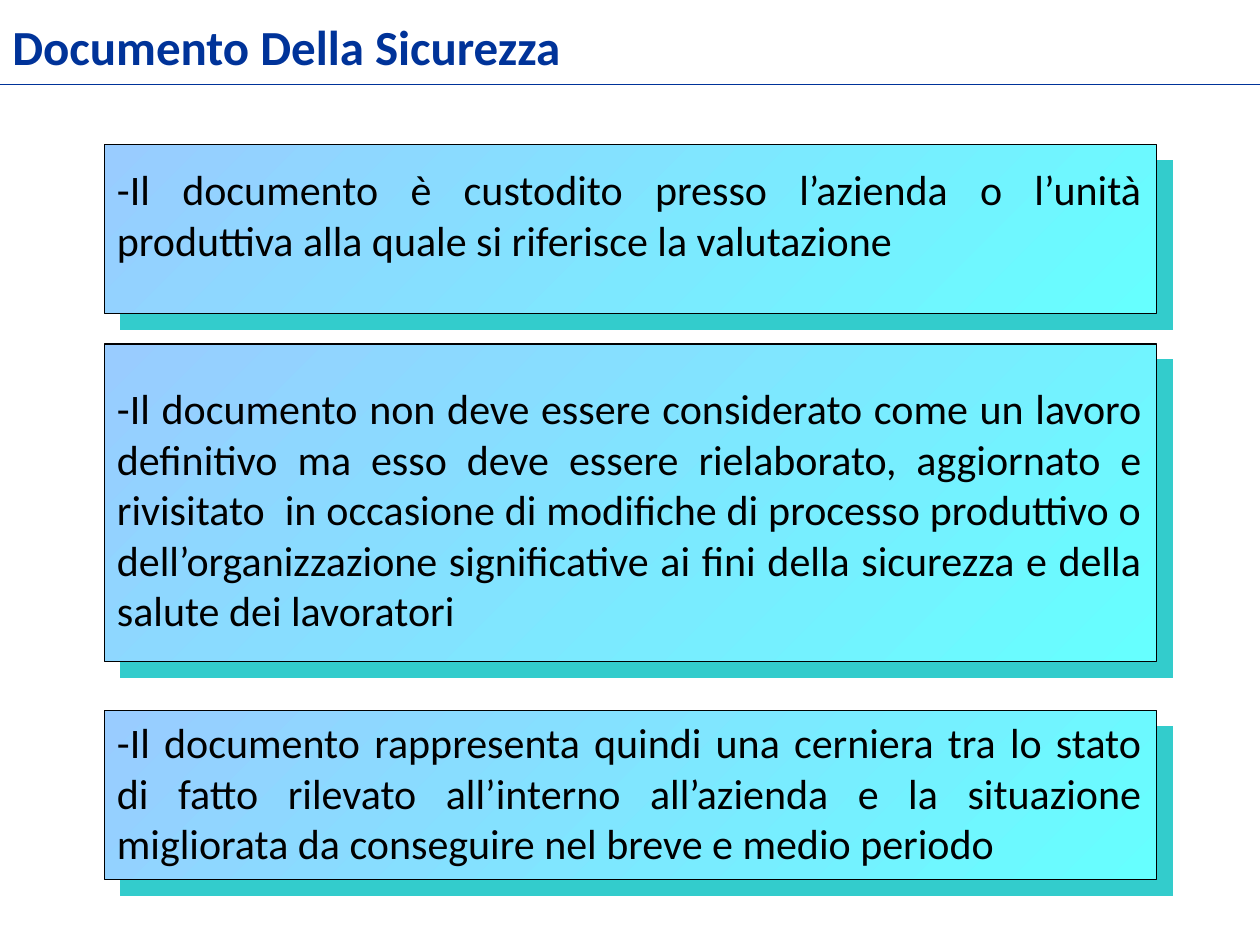
from lxml import etree
from pptx import Presentation
from pptx.dml.color import RGBColor
from pptx.enum.shapes import MSO_CONNECTOR, MSO_SHAPE
from pptx.enum.text import MSO_AUTO_SIZE, PP_ALIGN
from pptx.oxml.ns import qn
from pptx.util import Inches, Pt

RECT = MSO_SHAPE.RECTANGLE
LINE = MSO_CONNECTOR.STRAIGHT
GROW = MSO_AUTO_SIZE.SHAPE_TO_FIT_TEXT
LEFT, JUST = PP_ALIGN.LEFT, PP_ALIGN.JUSTIFY
NAVY = RGBColor(0x00, 0x33, 0x99)
BLACK = RGBColor(0x00, 0x00, 0x00)
SKY = RGBColor(0x99, 0xCC, 0xFF)
AQUA = RGBColor(0x66, 0xFF, 0xFF)
TEAL = RGBColor(0x33, 0xCC, 0xCC)

deck = Presentation()
deck.slide_width, deck.slide_height = Inches(10), Inches(7.5)
slide = deck.slides.add_slide(deck.slide_layouts[6])
shapes = slide.shapes


def write(words, place, align, style):
    box = shapes.add_textbox(*map(Inches, place))
    frame = box.text_frame
    frame.word_wrap = True
    frame.auto_size = GROW
    para = frame.paragraphs[0]
    para.alignment = align
    run = para.add_run()
    run.text = words
    color = style["color"]
    for key, value in style.items():
        if key != "color":
            setattr(run.font, key, value)
    run.font.color.rgb = color


HEAD = {"name": "Calibri", "size": Pt(28), "bold": True, "color": NAVY}
BODY = {"name": "Calibri", "size": Pt(24), "bold": False, "color": BLACK}
EDGE, WIDE = 0.83, 8.35

write("Documento Della Sicurezza", (0, 0.08, 8.3, 0.57), LEFT, HEAD)

rule = shapes.add_connector(LINE, 0, Inches(0.67), deck.slide_width, Inches(0.67))
rule.line.color.rgb = NAVY
rule.line.width = Pt(1)
etree.SubElement(rule._element.spPr, qn("a:effectLst"))

panels = [
    (1.15, 1.34, 0.1, 0.9,
     "-Il documento è custodito presso l’azienda o l’unità produttiva alla quale "
     "si riferisce la valutazione"),
    (2.73, 2.52, 0.26, 2.1,
     "-Il documento non deve essere considerato come un lavoro definitivo ma esso "
     "deve essere rielaborato, aggiornato e rivisitato  in occasione di modifiche "
     "di processo produttivo o dell’organizzazione significative ai fini della "
     "sicurezza e della salute dei lavoratori"),
    (5.64, 1.34, 0, 1.3,
     "-Il documento rappresenta quindi una cerniera tra lo stato di fatto rilevato "
     "all’interno all’azienda e la situazione migliorata da conseguire nel breve e "
     "medio periodo"),
]

for top, high, drop, tall, words in panels:
    panel = shapes.add_shape(RECT, *map(Inches, (EDGE, top, WIDE, high)))
    panel.fill.gradient()
    panel.fill.gradient_angle = 315
    for stop, color in zip(panel.fill.gradient_stops, (SKY, AQUA)):
        stop.color.rgb = color
    panel.line.color.rgb = BLACK
    panel.line.width = Pt(0.75)
    panel.shadow.inherit = False
    glow = panel._element.spPr.find(qn("a:effectLst"))
    cast = etree.SubElement(glow, qn("a:outerShdw"), dist=str(Pt(12.7)),
                            dir=str(45 * 60000), algn="ctr", rotWithShape="0")
    etree.SubElement(cast, qn("a:srgbClr"), val=str(TEAL))
    write(words, (EDGE, top + drop, WIDE - 0.02, tall), JUST, BODY)

deck.save("out.pptx")
